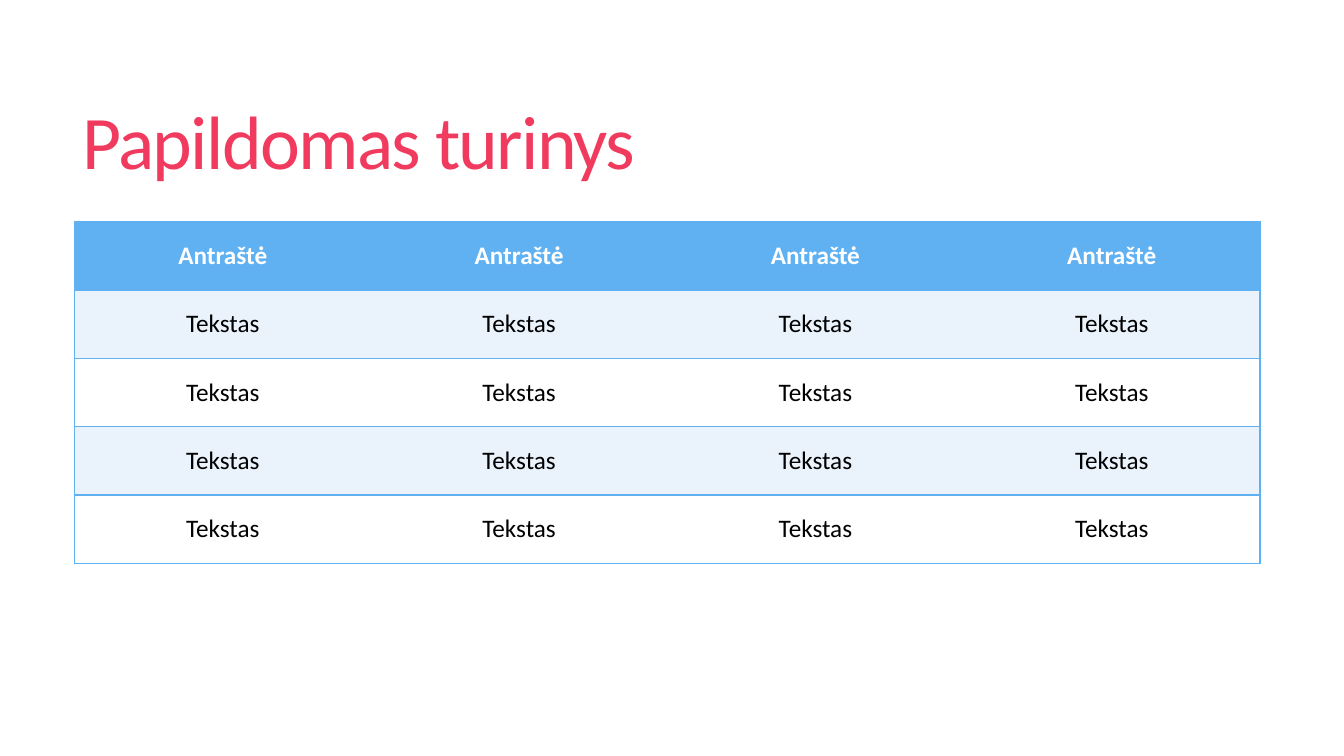
import pptx
import pptx.dml.color
import pptx.enum.text
import pptx.oxml
import pptx.oxml.ns
import pptx.util

Pt = pptx.util.Pt
FONT = "Calibri"
SKY, PALE, WHITE, BLACK, ROSE = "60B1F2", "EAF2FC", "FFFFFF", "000000", "F03B5E"
COLUMNS, BODY_ROWS = 4, 4
COLUMN_WIDTH, ROW_HEIGHT = 211.68, 48.8


def color(hex_code):
    return pptx.dml.color.RGBColor.from_string(hex_code)


def write(frame, text, size, ink, bold=False, align=None, line_spacing=None, tracking=None):
    """Put one formatted line of text into a text frame."""
    paragraph = frame.paragraphs[0]
    paragraph.alignment = align
    if line_spacing:
        paragraph.line_spacing = line_spacing
    run = paragraph.add_run()
    run.text = text
    run.font.name = FONT
    run.font.size = Pt(size)
    run.font.bold = bold
    run.font.color.rgb = color(ink)
    if tracking:
        run.font._element.set("spc", str(round(tracking * 100)))


def add_title(slide, text):
    title = slide.shapes.add_textbox(Pt(51.84), Pt(39.6), Pt(848.16), Pt(130.32))
    title.text_frame.word_wrap = True
    title.text_frame.vertical_anchor = pptx.enum.text.MSO_ANCHOR.MIDDLE
    write(title.text_frame, text, 54, ROSE, line_spacing=0.85, tracking=-1.2)


def set_borders(cell, visible):
    """Rule the visible sides of a cell and clear the others."""
    properties = cell._tc.get_or_add_tcPr()
    for side in "LRTB":
        paint = f'<a:solidFill><a:srgbClr val="{SKY}"/></a:solidFill>' if side in visible else "<a:noFill/>"
        properties.append(pptx.oxml.parse_xml(
            f'<a:ln{side} {pptx.oxml.ns.nsdecls("a")} w="{Pt(1)}">{paint}</a:ln{side}>'))


def format_cell(cell, text, fill, ink, bold, borders):
    set_borders(cell, borders)
    cell.fill.solid()
    cell.fill.fore_color.rgb = color(fill)
    cell.vertical_anchor = pptx.enum.text.MSO_ANCHOR.MIDDLE
    write(cell.text_frame, text, 18, ink, bold=bold, align=pptx.enum.text.PP_ALIGN.CENTER)


def add_content_table(slide, heading, body):
    rows = BODY_ROWS + 1
    table = slide.shapes.add_table(rows, COLUMNS, Pt(53.28), Pt(158.4),
                                   Pt(COLUMN_WIDTH * COLUMNS), Pt(ROW_HEIGHT * rows)).table
    for column in table.columns:
        column.width = Pt(COLUMN_WIDTH)
    for row_index, row in enumerate(table.rows):
        row.height = Pt(ROW_HEIGHT)
        is_header = row_index == 0
        fill = SKY if is_header else PALE if row_index % 2 else WHITE
        for column_index, cell in enumerate(row.cells):
            # Only the outer edges have vertical rules
            borders = "TB"
            if column_index == 0:
                borders += "L"
            if column_index == COLUMNS - 1:
                borders += "R"
            format_cell(cell, heading if is_header else body, fill,
                        WHITE if is_header else BLACK, is_header, borders)


def main():
    presentation = pptx.Presentation()
    presentation.slide_width, presentation.slide_height = Pt(960), Pt(540)
    slide = presentation.slides.add_slide(presentation.slide_layouts[6])
    # Title
    add_title(slide, "Papildomas turinys")
    # Table with a header and striped rows
    add_content_table(slide, "Antraštė", "Tekstas")
    presentation.save("out.pptx")


if __name__ == "__main__":
    main()
